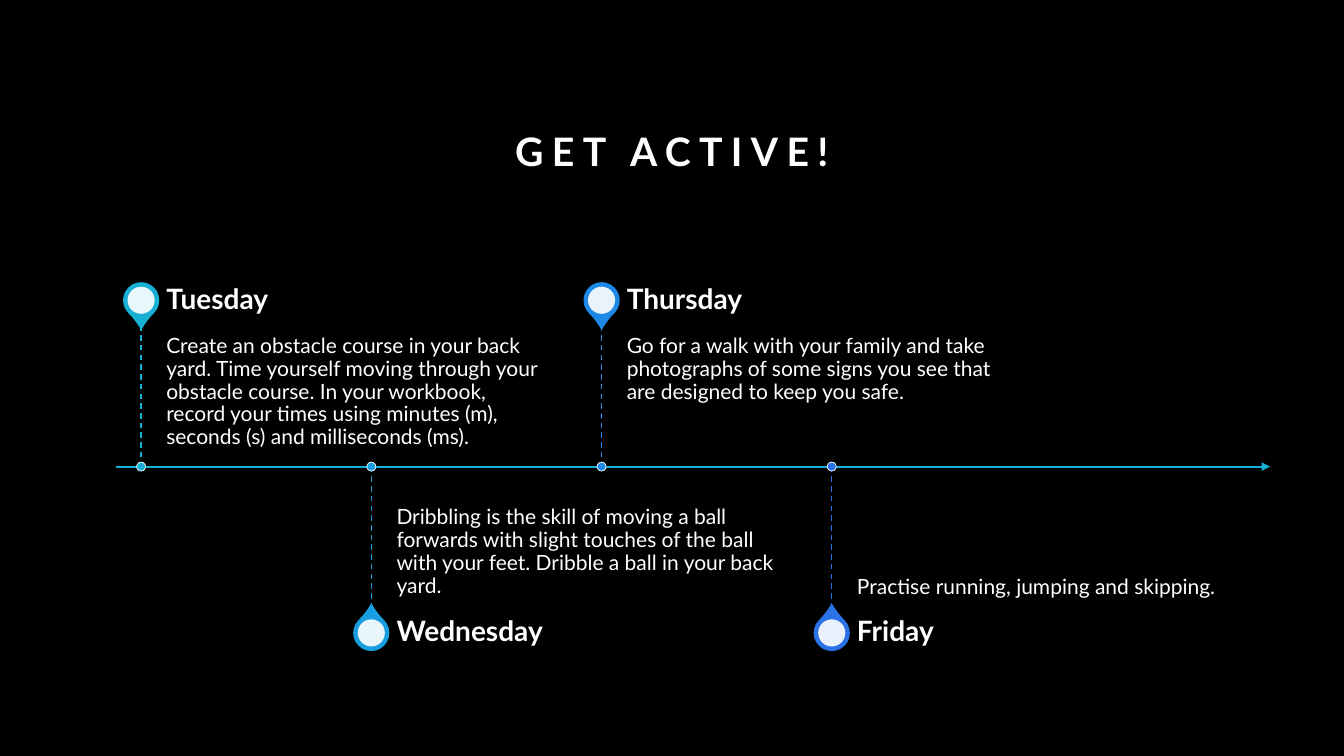
"""Build a slide with a weekday timeline of activities."""
from dataclasses import dataclass

from lxml import etree
from pptx import Presentation
from pptx.dml.color import RGBColor
from pptx.enum.dml import MSO_LINE
from pptx.enum.shapes import MSO_CONNECTOR, MSO_SHAPE
from pptx.enum.text import MSO_ANCHOR, PP_ALIGN
from pptx.oxml.ns import qn
from pptx.util import Pt

TEAR, OVAL = MSO_SHAPE.TEAR, MSO_SHAPE.OVAL
STRAIGHT = MSO_CONNECTOR.STRAIGHT
DASH = MSO_LINE.DASH
TOP, MIDDLE, BOTTOM = MSO_ANCHOR.TOP, MSO_ANCHOR.MIDDLE, MSO_ANCHOR.BOTTOM
CENTER = PP_ALIGN.CENTER

FONT = "Lato"
WHITE, BLACK, AXIS_COLOUR = "FFFFFF", "000000", "17B0D5"
AXIS_LEFT, AXIS_RIGHT, AXIS_Y = 82.8, 907.2, 333.3
FIRST_DAY_X, DAY_STEP = 100.8, 164.45
STEM_LENGTH, HEADING_HEIGHT = 100.8, 35.3
PIN_DISTANCE = 118.8
TEXT_OFFSET, TEXT_WIDTH = 18, 274.3
PIN_SIZE, PIN_HOLE_SIZE, DOT_SIZE = 24.9, 19.4, 6.4


@dataclass(frozen=True)
class Day:
    name: str
    activity: str
    colour: str
    above: bool


DAYS = [
    Day("Tuesday", "Create an obstacle course in your back yard. Time yourself moving "
        "through your obstacle course. In your workbook, record your times using "
        "minutes (m), seconds (s) and milliseconds (ms).", "17B0D5", True),
    Day("Wednesday", "Dribbling is the skill of moving a ball forwards with slight "
        "touches of the ball with your feet. Dribble a ball in your back yard.",
        "189DE0", False),
    Day("Thursday", "Go for a walk with your family and take photographs of some signs "
        "you see that are designed to keep you safe.", "1E88E6", True),
    Day("Friday", "Practise running, jumping and skipping.", "2973E7", False),
]


def paint(colour_format, colour: str) -> None:
    colour_format.rgb = RGBColor.from_string(colour)


def format_paragraph(paragraph, size: float, bold: bool, line_spacing: float) -> None:
    paragraph.line_spacing = line_spacing
    font = paragraph.font
    font.name, font.size, font.bold = FONT, Pt(size), bold
    paint(font.color, WHITE)


def add_title(slide, text: str) -> None:
    title = slide.shapes.title
    title.left, title.top, title.width, title.height = Pt(120), Pt(60), Pt(720), Pt(68.4)
    title.text_frame.text = text
    title.text_frame.vertical_anchor = BOTTOM
    paragraph = title.text_frame.paragraphs[0]
    format_paragraph(paragraph, 28, True, 1.2)
    paragraph.alignment = CENTER
    paragraph.runs[0].font._element.set("spc", "600")


def add_line(slide, start: tuple[float, float], end: tuple[float, float],
             colour: str, width: float):
    connector = slide.shapes.add_connector(STRAIGHT, *map(Pt, start + end))
    paint(connector.line.color, colour)
    connector.line.width = Pt(width)
    etree.SubElement(connector._element.spPr, qn("a:effectLst"))
    return connector


def add_centred_shape(slide, kind, x: float, y: float, size: float, fill: str):
    shape = slide.shapes.add_shape(
        kind, Pt(x - size / 2), Pt(y - size / 2), Pt(size), Pt(size))
    shape.shadow.inherit = False
    shape.fill.solid()
    paint(shape.fill.fore_color, fill)
    return shape


def outline(shape, colour: str, width: float) -> None:
    paint(shape.line.color, colour)
    shape.line.width = Pt(width)


def add_text(slide, text: str, x: float, y: float, height: float, anchor,
             margins: tuple[float, float, float, float], size: float, bold: bool) -> None:
    box = slide.shapes.add_textbox(Pt(x), Pt(y), Pt(TEXT_WIDTH), Pt(height))
    frame = box.text_frame
    frame.word_wrap = True
    frame.vertical_anchor = anchor
    (frame.margin_left, frame.margin_top,
     frame.margin_right, frame.margin_bottom) = map(Pt, margins)
    frame.text = text
    format_paragraph(frame.paragraphs[0], size, bold, 0.9)


def add_axis(slide) -> None:
    axis = add_line(slide, (AXIS_LEFT, AXIS_Y), (AXIS_RIGHT, AXIS_Y), AXIS_COLOUR, 1.5)
    etree.SubElement(axis.line._get_or_add_ln(), qn("a:tailEnd"), type="triangle")


def add_pin(slide, x: float, y: float, day: Day) -> None:
    pin = add_centred_shape(slide, TEAR, x, y, PIN_SIZE, day.colour)
    pin.adjustments[0] = 1.15
    pin.rotation = 135 if day.above else 315
    outline(pin, day.colour, 1)
    hole = add_centred_shape(slide, OVAL, x, y, PIN_HOLE_SIZE, WHITE)
    hole.line.fill.background()
    colour = hole._element.spPr.find(qn("a:solidFill"))[0]
    etree.SubElement(colour, qn("a:alpha"), val="90000")


def add_day(slide, x: float, day: Day) -> None:
    direction = -1 if day.above else 1
    stem_end = AXIS_Y + direction * STEM_LENGTH
    text_x = x + TEXT_OFFSET
    if day.above:
        heading_y, activity_y = stem_end - HEADING_HEIGHT, stem_end
        anchor, margins = TOP, (0, 7.2, 7.2, 11.5)
    else:
        heading_y, activity_y = stem_end, AXIS_Y
        anchor, margins = BOTTOM, (0, 11.5, 0, 7.2)
    add_pin(slide, x, AXIS_Y + direction * PIN_DISTANCE, day)
    add_text(slide, day.activity, text_x, activity_y, STEM_LENGTH, anchor, margins, 15, False)
    add_text(slide, day.name, text_x, heading_y, HEADING_HEIGHT, MIDDLE,
             (0, 0, 10, 0), 20, True)
    upper, lower = sorted((AXIS_Y, stem_end))
    stem = add_line(slide, (x, upper), (x, lower), day.colour, 1)
    stem.line.dash_style = DASH
    dot = add_centred_shape(slide, OVAL, x, AXIS_Y, DOT_SIZE, day.colour)
    outline(dot, WHITE, 0.5)


def main() -> None:
    presentation = Presentation()
    presentation.slide_width, presentation.slide_height = Pt(960), Pt(540)
    slide = presentation.slides.add_slide(presentation.slide_layouts[5])
    slide.background.fill.solid()
    paint(slide.background.fill.fore_color, BLACK)
    add_title(slide, "GET ACTIVE!")
    add_axis(slide)
    for index, day in enumerate(DAYS):
        add_day(slide, FIRST_DAY_X + index * DAY_STEP, day)
    presentation.save("out.pptx")


if __name__ == "__main__":
    main()
